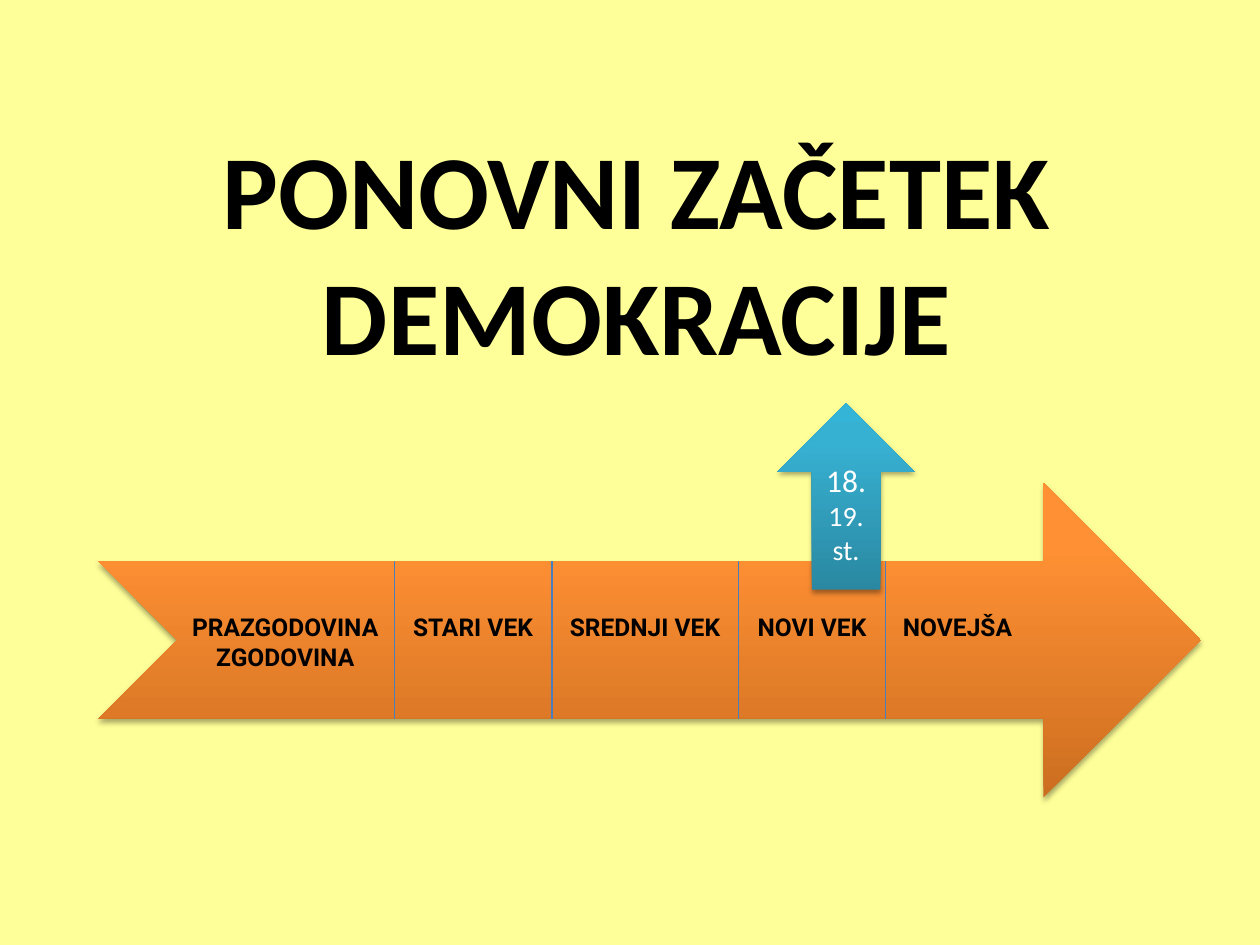
from copy import deepcopy
from lxml.etree import fromstring
from pptx import Presentation
from pptx.dml.color import RGBColor
from pptx.enum.shapes import MSO_CONNECTOR, MSO_SHAPE
from pptx.enum.text import MSO_ANCHOR, PP_ALIGN
from pptx.oxml.ns import qn
from pptx.util import Inches, Pt

NS = 'xmlns:a="http://schemas.openxmlformats.org/drawingml/2006/main"'
SHADOW = (f'<a:outerShdw {NS} blurRad="{Pt(3.1)}" dist="{Pt(1.8)}" dir="5400000" '
          'rotWithShape="0"><a:srgbClr val="000000"><a:alpha val="35000"/>'
          '</a:srgbClr></a:outerShdw>')

# Content
TITLE = "PONOVNI ZAČETEK DEMOKRACIJE"
ERAS = [["PRAZGODOVINA", "ZGODOVINA"], ["STARI VEK"], ["SREDNJI VEK"],
        ["NOVI VEK"], ["NOVEJŠA"]]
MARK = [("18.", 18), ("19.", 16), ("st.", 16)]

# Layout
EDGES = [1.4, 3.13, 4.38, 5.86, 7.03, 8.17]
BAND = (0.78, 3.83, 8.75, 2.5)
TOP = BAND[1] + BAND[3] / 4
BASE = BAND[1] + BAND[3] * 3 / 4
LABEL = 4.86
ORANGE = ["CC6E20", "FF9034", "FF9136"]
TEAL = ["2A88A2", "37B1D2", "34B4D6"]


def rgb(code):
    return RGBColor.from_string(code)


def write(frame, lines, font, color, bold=False):
    frame.word_wrap = True
    for i, (text, size) in enumerate(lines):
        para = frame.paragraphs[0] if i == 0 else frame.add_paragraph()
        para.alignment = PP_ALIGN.CENTER
        run = para.add_run()
        run.text = text
        run.font.name, run.font.size, run.font.bold = font, Pt(size), bold
        run.font.color.rgb = rgb(color)


def arrow(kind, box, colors):
    shape = slide.shapes.add_shape(kind, *map(Inches, box))
    shape.line.fill.background()
    shape.fill.gradient()
    shape.fill.gradient_angle = 90
    stops = shape._element.spPr.find(qn("a:gradFill")).find(qn("a:gsLst"))
    stops.append(deepcopy(stops[-1]))
    for stop, place, color in zip(shape.fill.gradient_stops, (0, 0.8, 1), colors):
        stop.position = place
        stop.color.rgb = rgb(color)
    shape.shadow.inherit = False
    shape._element.spPr.find(qn("a:effectLst")).append(fromstring(SHADOW))
    return shape


def textbox(box, inset):
    frame = slide.shapes.add_textbox(*map(Inches, box)).text_frame
    frame.margin_left = frame.margin_right = Inches(inset)
    frame.margin_top = frame.margin_bottom = Inches(inset / 2)
    return frame


deck = Presentation()
deck.slide_width, deck.slide_height = Inches(10), Inches(7.5)
slide = deck.slides.add_slide(deck.slide_layouts[6])
slide.background.fill.solid()
slide.background.fill.fore_color.rgb = rgb("FFFF99")

# Time band
arrow(MSO_SHAPE.NOTCHED_RIGHT_ARROW, BAND, ORANGE)

# Title
head = textbox((0.55, 0.78, 9, 2.42), 0.1)
head.vertical_anchor = MSO_ANCHOR.MIDDLE
write(head, [(TITLE, 60)], "Calibri", "000000", True)

# Era labels
for era, left, right in zip(ERAS, EDGES, EDGES[1:]):
    frame = textbox((left, LABEL, right - left, 0.5), 0)
    write(frame, [(word, 14) for word in era], "Roboto", "000000", True)

# Dividers between eras
for x in EDGES[1:-1]:
    line = slide.shapes.add_connector(
        MSO_CONNECTOR.STRAIGHT, *map(Inches, (x, TOP, x, BASE)))
    line.line.color.rgb = rgb("4B7EBC")
    line.line.width = Pt(0.75)
    line._element.spPr.append(fromstring(f"<a:effectLst {NS}/>"))

# Century marker
mark = arrow(MSO_SHAPE.UP_ARROW, (6.17, 3.2, 1.09, 1.48), TEAL)
mark.text_frame.vertical_anchor = MSO_ANCHOR.MIDDLE
write(mark.text_frame, MARK, "Calibri", "FFFFFF")

deck.save("out.pptx")
